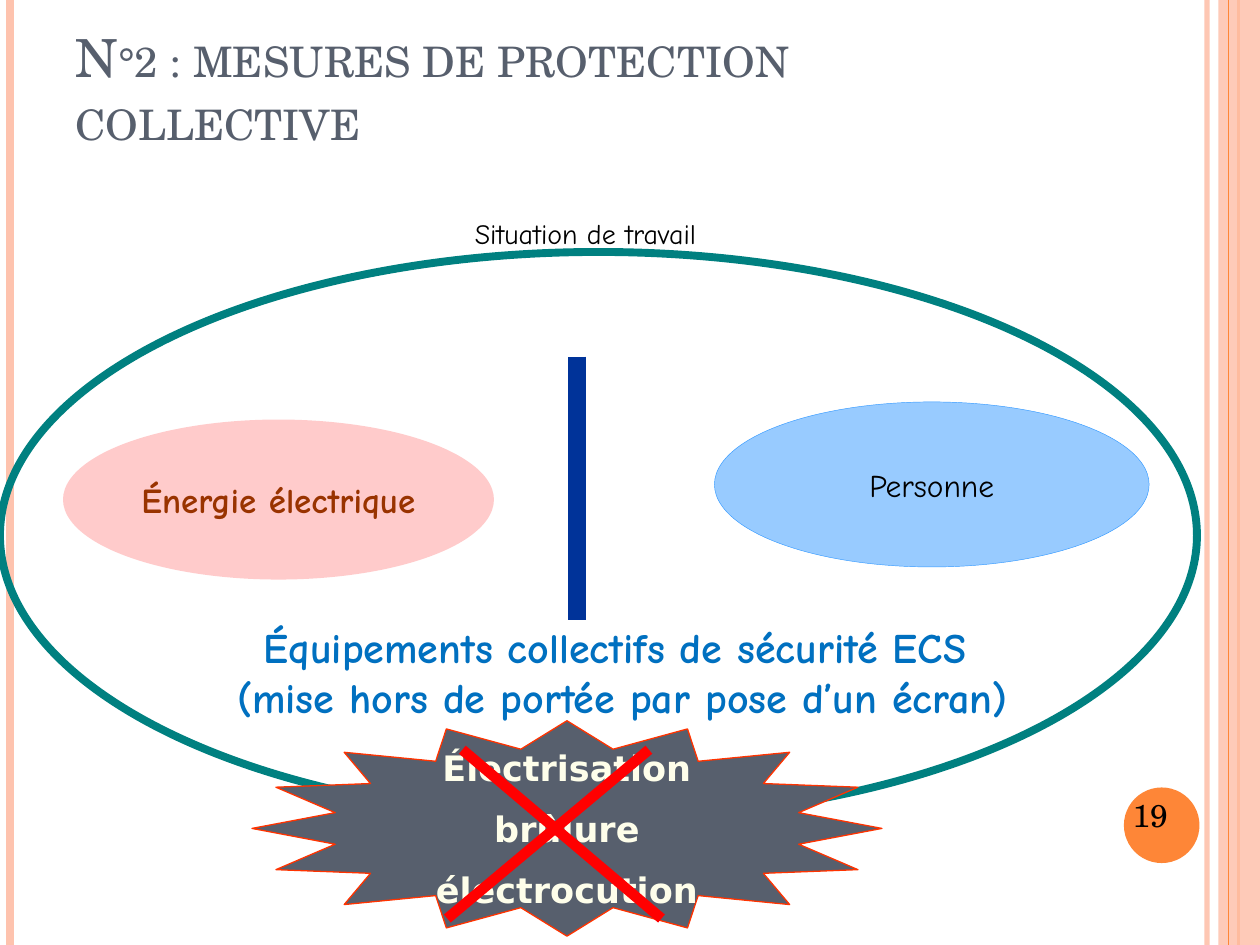
from pptx import Presentation
from pptx.dml.color import RGBColor
from pptx.enum.shapes import MSO_CONNECTOR, MSO_SHAPE as Form
from pptx.enum.text import MSO_ANCHOR as Anchor, PP_ALIGN as Align
from pptx.oxml.ns import qn
from pptx.util import Inches, Pt
from lxml.etree import SubElement

THEME = {
    "peach": "FEC3AE", "orange": "FE8637", "teal": "008080", "slate": "575F6D",
    "flame": "FF3300", "cream": "FEFEEA", "rose": "FF9999", "rust": "993300",
    "sky": "3399FF", "navy": "003399", "azure": "0070C0", "red": "FF0000",
    "black": "000000",
    "serif": "TeX Gyre Schola", "hand": "Comic Neue", "sans": "DejaVu Sans",
    "title": 30, "measure": 24, "strong": 20, "body": 18, "label": 16,
}

TITLE = ["N°2 : mesures de protection collective"]
SITUATION = ["Situation de travail"]
ENERGY = ["Énergie électrique"]
PERSON = ["Personne"]
MEASURES = ["Équipements collectifs de sécurité ECS",
            " (mise hors de portée par pose d’un écran)"]
HARMS = ["Électrisation", "brûlure", "électrocution"]
PAGE_NUMBER = ["19"]

HEIGHT = 7.5
EDGE_RULES = [(9.58, "peach", 3, 93), (0.08, "peach", 4.5, 100), (9.83, "orange", 1.5, 100)]
CROSS = [((3.67, 5.95), (5.25, 7.29)), ((3.55, 7.29), (5.15, 5.95))]


def color(name):
    return RGBColor.from_string(THEME[name])


def fade(element, percent):
    """Make the solid fill under an element partly transparent."""
    if percent < 100:
        tint = next(element.iter(qn("a:srgbClr")))
        SubElement(tint, qn("a:alpha"), val=str(percent * 1000))


def add_line(page, start, end, ink, width, opacity=100):
    """Draw a straight line without shadow."""
    points = [Inches(value) for value in (*start, *end)]
    line = page.shapes.add_connector(MSO_CONNECTOR.STRAIGHT, *points)
    line.line.color.rgb = color(ink)
    line.line.width = Pt(width)
    properties = line._element.spPr
    fade(properties, opacity)
    SubElement(properties, qn("a:effectLst"))


def add_form(page, form, place, fill=None, opacity=100, line=None, width=1):
    """Draw a preset shape without shadow."""
    shape = page.shapes.add_shape(form, *map(Inches, place))
    shape.shadow.inherit = False
    if fill:
        shape.fill.solid()
        shape.fill.fore_color.rgb = color(fill)
        fade(shape._element.spPr, opacity)
    else:
        shape.fill.background()
    if line:
        shape.line.color.rgb = color(line)
        shape.line.width = Pt(width)
    else:
        shape.line.fill.background()
    return shape


def write(shape, texts, face, size, ink, bold=False, align=Align.LEFT,
          anchor=Anchor.TOP, wrap=True, gap=0, small_caps=False):
    """Fill a shape with one paragraph per text."""
    frame = shape.text_frame
    frame.word_wrap = wrap
    frame.vertical_anchor = anchor
    style = {"name": THEME[face], "size": Pt(THEME[size]), "bold": bold}
    for index, text in enumerate(texts):
        para = frame.add_paragraph() if index else frame.paragraphs[0]
        para.alignment = align
        if index and gap:
            para.space_before = Pt(gap)
        span = para.add_run()
        span.text = text
        for key, value in style.items():
            setattr(span.font, key, value)
        span.font.color.rgb = color(ink)
        if small_caps:
            span._r.get_or_add_rPr().set("cap", "small")


def add_text(page, place, texts, *style, **options):
    box = page.shapes.add_textbox(*map(Inches, place))
    write(box, texts, *style, **options)


def build_frame(page):
    """Draw the decorative edges and the page number disc."""
    for x, ink, width, opacity in EDGE_RULES:
        add_line(page, (x, 0), (x, HEIGHT), ink, width, opacity)
    add_form(page, Form.RECTANGLE, (9.67, 0, 0.33, HEIGHT), "peach", 87)
    add_line(page, (9.75, 0), (9.75, HEIGHT), "orange", 0.75)
    add_form(page, Form.OVAL, (8.92, 6.25, 0.6, 0.6), "orange")


def build_diagram(page):
    """Draw the work situation, its screen and the crossed-out harms."""
    centred = {"align": Align.CENTER, "anchor": Anchor.MIDDLE}
    add_form(page, Form.OVAL, (0, 2, 9.5, 4.5), line="teal", width=4.5)
    add_text(page, (0.5, 0, 8.17, 1.25), TITLE, "serif", "title", "slate",
             anchor=Anchor.BOTTOM, small_caps=True)

    burst = add_form(page, Form.STAR_16_POINT, (2, 5.72, 5, 1.71), "slate",
                     line="flame", width=0.75)
    burst.adjustments[0] = 0.375
    for side in ("left", "top", "right", "bottom"):
        setattr(burst.text_frame, f"margin_{side}", 0)
    write(burst, HARMS, "sans", "strong", "cream", bold=True, gap=11, **centred)

    add_text(page, (3.67, 1.67, 2.23, 0.37), SITUATION, "hand", "label", "black", wrap=False)
    energy = add_form(page, Form.OVAL, (0.5, 3.33, 3.42, 1.27), "rose", 50)
    write(energy, ENERGY, "hand", "strong", "rust", bold=True, wrap=False, **centred)
    person = add_form(page, Form.OVAL, (5.67, 3.19, 3.45, 1.31), "sky", 50, "sky", 0.25)
    write(person, PERSON, "hand", "body", "black", wrap=False, **centred)

    add_line(page, (4.58, 2.83), (4.58, 4.92), "navy", 10)
    add_text(page, (1.28, 4.88, 7.2, 0.91), MEASURES, "hand", "measure", "azure",
             bold=True, align=Align.CENTER, wrap=False)
    for start, end in CROSS:
        add_line(page, start, end, "red", 6)
    add_text(page, (8.89, 6.27, 0.67, 0.57), PAGE_NUMBER, "serif", "body", "black")


def main():
    deck = Presentation()
    deck.slide_width, deck.slide_height = Inches(10), Inches(HEIGHT)
    page = deck.slides.add_slide(deck.slide_layouts[6])
    build_frame(page)
    build_diagram(page)
    deck.save("out.pptx")


if __name__ == "__main__":
    main()
